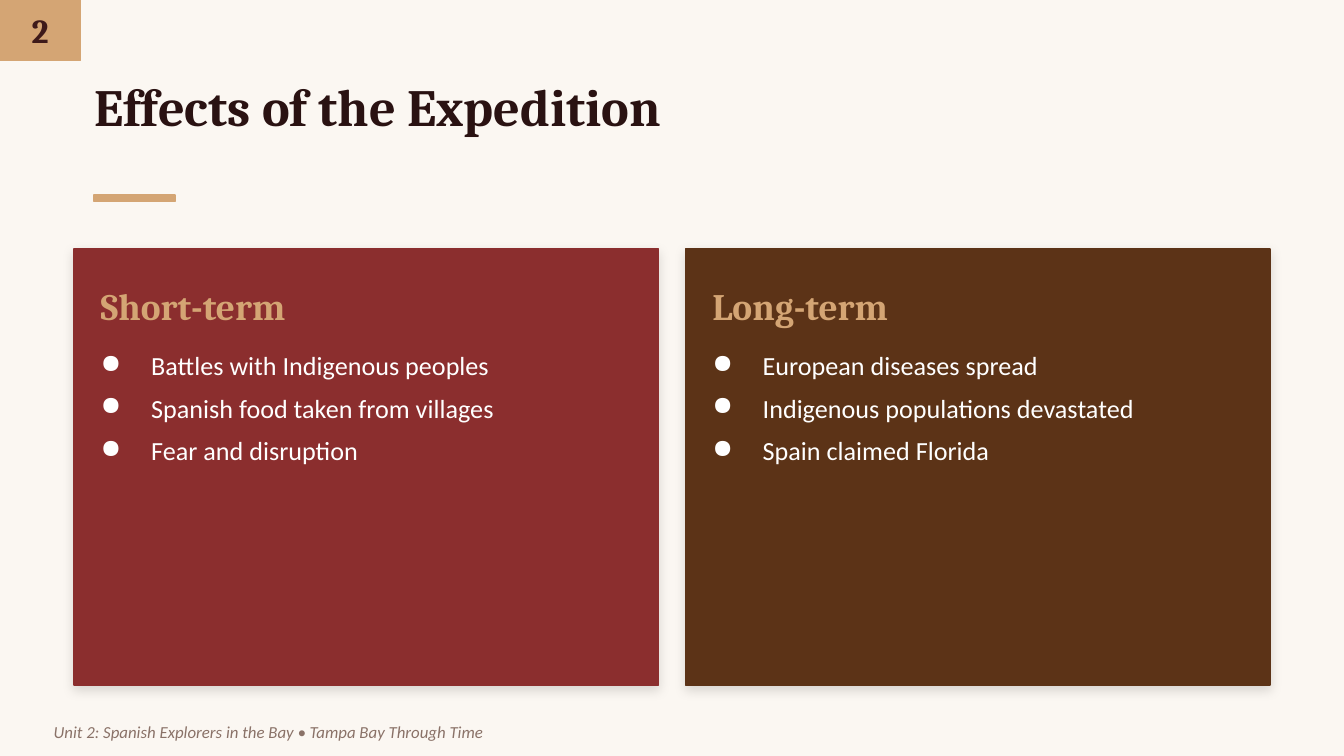
from dataclasses import dataclass

import pptx
import pptx.dml.color
import pptx.enum.shapes
import pptx.enum.text
import pptx.oxml
import pptx.oxml.ns
import pptx.util
from pptx.shapes.autoshape import Shape
from pptx.slide import Slide
from pptx.text.text import _Paragraph

Pt = pptx.util.Pt
ALIGN = pptx.enum.text.PP_ALIGN
ANCHOR = pptx.enum.text.MSO_ANCHOR


@dataclass(frozen=True)
class Theme:
    paper: str = "FBF7F2"
    gold: str = "D4A574"
    red: str = "8B2E2E"
    brown: str = "5C3317"
    title: str = "2A1212"
    number: str = "3E1A1A"
    footer: str = "8A7268"
    white: str = "FFFFFF"
    heading_font: str = "Cambria"
    body_font: str = "Calibri"
    title_size: float = 28
    heading_size: float = 20
    number_size: float = 18
    body_size: float = 14
    footer_size: float = 9


@dataclass(frozen=True)
class Area:
    """A rectangle in points."""
    left: float
    top: float
    width: float
    height: float

    def lengths(self) -> tuple[pptx.util.Length, ...]:
        return tuple(Pt(v) for v in (self.left, self.top, self.width, self.height))


@dataclass(frozen=True)
class TextStyle:
    font: str
    size: float
    color: str
    bold: bool = False
    italic: bool = False


@dataclass(frozen=True)
class Card:
    heading: str
    points: tuple[str, ...]
    color: str


THEME = Theme()
TITLE = TextStyle(THEME.heading_font, THEME.title_size, THEME.title, bold=True)
HEADING = TextStyle(THEME.heading_font, THEME.heading_size, THEME.gold, bold=True)
NUMBER = TextStyle(THEME.heading_font, THEME.number_size, THEME.number, bold=True)
BODY = TextStyle(THEME.body_font, THEME.body_size, THEME.white)
FOOTER = TextStyle(THEME.body_font, THEME.footer_size, THEME.footer, italic=True)

CARDS = (
    Card("Short-term",
         ("Battles with Indigenous peoples",
          "Spanish food taken from villages",
          "Fear and disruption"),
         THEME.red),
    Card("Long-term",
         ("European diseases spread",
          "Indigenous populations devastated",
          "Spain claimed Florida"),
         THEME.brown),
)
CARD_LEFT, CARD_TOP, CARD_WIDTH, CARD_HEIGHT = 39.6, 133.2, 313.2, 234
CARD_GAP = 14.4
CARD_PADDING = 14.4
BULLET_INDENT = 27


def rgb(color: str) -> pptx.dml.color.RGBColor:
    return pptx.dml.color.RGBColor.from_string(color)


def add_block(page: Slide, area: Area, color: str) -> Shape:
    block = page.shapes.add_shape(
        pptx.enum.shapes.MSO_SHAPE.RECTANGLE, *area.lengths())
    block.shadow.inherit = False
    block.fill.solid()
    block.fill.fore_color.rgb = rgb(color)
    block.line.color.rgb = rgb(color)
    block.line.width = Pt(1)
    return block


def add_soft_shadow(block: Shape) -> None:
    """Drop a faint black shadow straight down."""
    effects = block.element.spPr.find(pptx.oxml.ns.qn("a:effectLst"))
    effects.append(pptx.oxml.parse_xml(
        f'<a:outerShdw {pptx.oxml.ns.nsdecls("a")} blurRad="{Pt(6)}" '
        f'dist="{Pt(2)}" dir="5400000" algn="bl" rotWithShape="0">'
        '<a:srgbClr val="000000"><a:alpha val="12000"/></a:srgbClr>'
        '</a:outerShdw>'))


def add_bullet(para: _Paragraph) -> None:
    properties = para._p.get_or_add_pPr()
    properties.set("marL", str(Pt(BULLET_INDENT)))
    properties.set("indent", str(-Pt(BULLET_INDENT)))
    properties.append(pptx.oxml.parse_xml(
        f'<a:buChar {pptx.oxml.ns.nsdecls("a")} char="●"/>'))


def add_text(page: Slide, area: Area, lines: tuple[str, ...], style: TextStyle,
             anchor: ANCHOR = ANCHOR.MIDDLE, align: ALIGN = ALIGN.LEFT,
             bulleted: bool = False) -> None:
    frame = page.shapes.add_textbox(*area.lengths()).text_frame
    frame.word_wrap = True
    frame.vertical_anchor = anchor
    frame.margin_left = frame.margin_right = Pt(0)
    frame.margin_top = frame.margin_bottom = Pt(0)
    for index, line in enumerate(lines):
        para = frame.add_paragraph() if index else frame.paragraphs[0]
        para.text = line
        para.alignment = align
        if bulleted:
            para.space_after = Pt(6)
            add_bullet(para)
        para.font.name = style.font
        para.font.size = Pt(style.size)
        para.font.color.rgb = rgb(style.color)
        para.font.bold = style.bold
        para.font.italic = style.italic


def add_card(page: Slide, card: Card, left: float) -> None:
    add_soft_shadow(add_block(
        page, Area(left, CARD_TOP, CARD_WIDTH, CARD_HEIGHT), card.color))
    text_left = left + CARD_PADDING
    text_width = 288
    add_text(page, Area(text_left, 144, text_width, 39.6), (card.heading,), HEADING)
    add_text(page, Area(text_left, 187.2, text_width, 172.8), card.points, BODY,
             anchor=ANCHOR.TOP, bulleted=True)


def main() -> None:
    deck = pptx.Presentation()
    deck.slide_width, deck.slide_height = Pt(720), Pt(405)
    page = deck.slides.add_slide(deck.slide_layouts[6])
    page.background.fill.solid()
    page.background.fill.fore_color.rgb = rgb(THEME.paper)

    number_tab = Area(0, 0, 43.2, 32.4)
    add_block(page, number_tab, THEME.gold)
    add_text(page, number_tab, ("2",), NUMBER, align=ALIGN.CENTER)
    add_text(page, Area(50.4, 39.6, 619.2, 61.2), ("Effects of the Expedition",),
             TITLE, anchor=ANCHOR.TOP)
    add_block(page, Area(50.4, 104.4, 43.2, 3.6), THEME.gold)

    for index, card in enumerate(CARDS):
        add_card(page, card, CARD_LEFT + index * (CARD_WIDTH + CARD_GAP))

    add_text(page, Area(28.8, 383, 662.4, 18),
             ("Unit 2: Spanish Explorers in the Bay • Tampa Bay Through Time",),
             FOOTER)
    deck.save("out.pptx")


if __name__ == "__main__":
    main()
